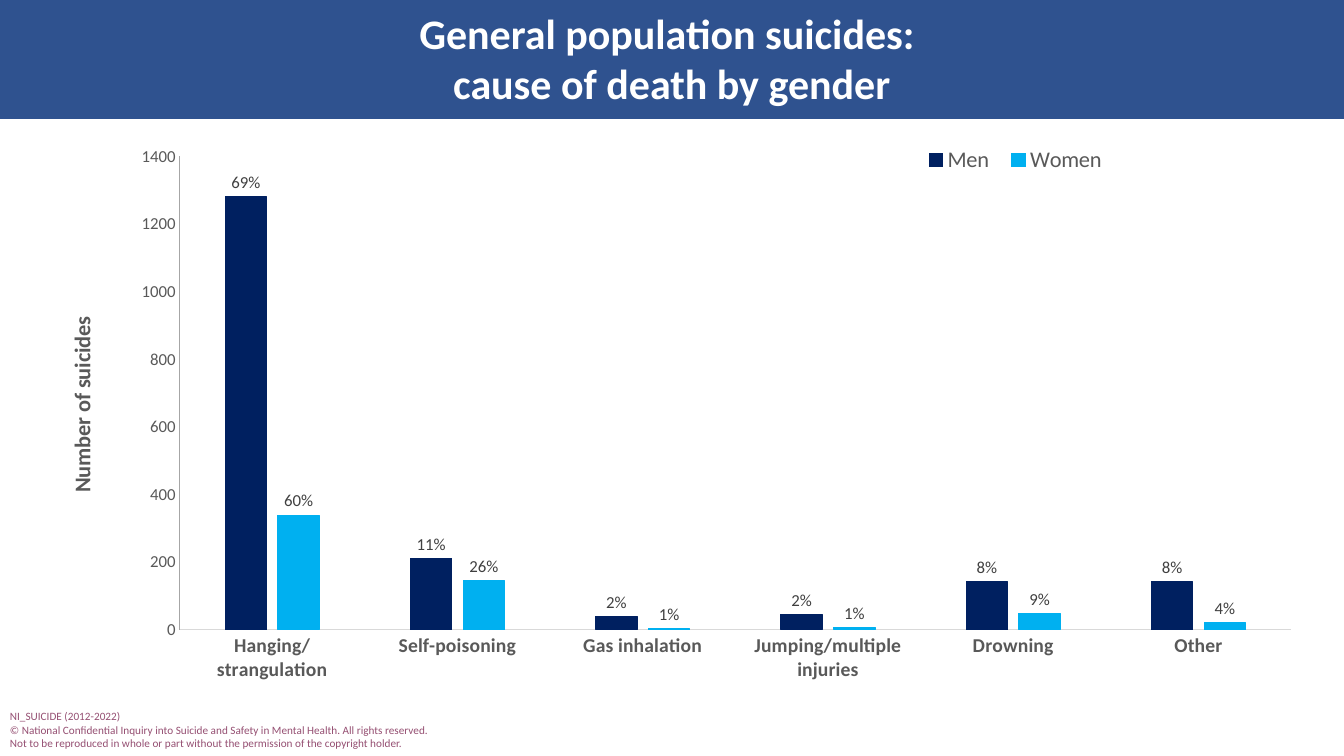
from lxml.etree import SubElement
from pptx import Presentation
from pptx.chart.data import CategoryChartData
from pptx.dml.color import RGBColor
from pptx.enum.chart import XL_CHART_TYPE, XL_LABEL_POSITION, XL_LEGEND_POSITION, XL_TICK_MARK
from pptx.enum.shapes import MSO_SHAPE
from pptx.enum.text import MSO_ANCHOR, MSO_AUTO_SIZE, PP_ALIGN
from pptx.oxml.ns import qn
from pptx.util import Inches, Pt

COLORS = {
    "band": "2F528F", "white": "FFFFFF", "note": "954F72", "text": "595959",
    "label": "404040", "base": "D9D9D9", "scale": "A6A6A6",
    "Men": "002060", "Women": "00B0F0",
}
CAUSES = ["Hanging/strangulation", "Self-poisoning", "Gas inhalation",
          "Jumping/multiple injuries", "Drowning", "Other"]
COUNTS = {"Men": [1281, 211, 40, 46, 142, 142], "Women": [339, 145, 3, 6, 48, 20]}
SHARES = {"Men": [69, 11, 2, 2, 8, 8], "Women": [60, 26, 1, 1, 9, 4]}
TITLE = ["General population suicides: ", "cause of death by gender"]
NOTE = [
    "NI_SUICIDE (2012-2022)",
    "© National Confidential Inquiry into Suicide and Safety in Mental Health. All rights reserved.",
    "Not to be reproduced in whole or part without the permission of the copyright holder.",
]


def color(name):
    return RGBColor.from_string(COLORS[name])


def style(font, size, name, bold=False):
    font.name = "Calibri"
    font.size = Pt(size)
    font.bold = bold
    font.color.rgb = color(name)


def write(frame, lines, size, name, bold=False, align=None):
    for i, line in enumerate(lines):
        para = frame.paragraphs[0] if i == 0 else frame.add_paragraph()
        para.alignment = align
        run = para.add_run()
        run.text = line
        style(run.font, size, name, bold)


def add_band(slide, x, y, w, h):
    band = slide.shapes.add_shape(MSO_SHAPE.RECTANGLE, Inches(x), Inches(y), Inches(w), Inches(h))
    band.shadow.inherit = False
    band.fill.solid()
    band.fill.fore_color.rgb = color("band")
    band.line.fill.background()


def add_text(slide, x, y, w, h, lines, wrap=True, anchor=MSO_ANCHOR.TOP,
             fit=MSO_AUTO_SIZE.NONE, **look):
    frame = slide.shapes.add_textbox(Inches(x), Inches(y), Inches(w), Inches(h)).text_frame
    frame.word_wrap = wrap
    frame.vertical_anchor = anchor
    frame.auto_size = fit
    write(frame, lines, **look)


def place(part, index, inner=False, **spot):
    """Set a chart part's manual layout, in fractions of the chart."""
    for old in part.findall(qn("c:layout")):
        part.remove(old)
    layout = part.makeelement(qn("c:layout"))
    part.insert(index, layout)
    manual = SubElement(layout, qn("c:manualLayout"))
    if inner:
        SubElement(manual, qn("c:layoutTarget"), val="inner")
    for mode in ("xMode", "yMode"):
        SubElement(manual, qn(f"c:{mode}"), val="edge")
    for key, value in spot.items():
        SubElement(manual, qn(f"c:{key}"), val=str(value))


def set_axis(axis, size, line, width, bold=False):
    axis.has_major_gridlines = False
    axis.major_tick_mark = axis.minor_tick_mark = XL_TICK_MARK.NONE
    style(axis.tick_labels.font, size, "text", bold)
    axis.format.line.color.rgb = color(line)
    axis.format.line.width = Pt(width)


def set_series(series):
    series.format.fill.solid()
    series.format.fill.fore_color.rgb = color(series.name)
    series.format.line.color.rgb = color(series.name)
    series.format.line.width = Pt(0.75)
    labels = series.data_labels
    labels.show_value = True
    labels.position = XL_LABEL_POSITION.OUTSIDE_END
    style(labels.font, 12, "label")
    for i, share in enumerate(SHARES[series.name]):
        label = series.points[i].data_label
        write(label.text_frame, [f"{share}%"], 12, "label")
        label.position = XL_LABEL_POSITION.OUTSIDE_END


def add_bars(slide, x, y, w, h):
    data = CategoryChartData()
    data.categories = CAUSES
    for name, counts in COUNTS.items():
        data.add_series(name, counts)
    chart = slide.shapes.add_chart(XL_CHART_TYPE.COLUMN_CLUSTERED, Inches(x), Inches(y),
                                   Inches(w), Inches(h), data).chart
    chart.has_title = False
    style(chart.font, 12, "text")

    # Bars and their labels
    plot = chart.plots[0]
    plot.vary_by_categories = False
    plot.gap_width = 219
    plot.overlap = -27
    for series in plot.series:
        set_series(series)
    place(plot._element.getparent(), 0, inner=True, x=0.11, y=0.06, w=0.88, h=0.81)
    place(plot._element.getparent(), 0, inner=True, x=0.112, y=0.064, w=0.875, h=0.807)

    # Axes
    set_axis(chart.category_axis, 14, "base", 0.75, bold=True)
    scale = chart.value_axis
    set_axis(scale, 12, "scale", 0.5)
    scale.minimum_scale, scale.maximum_scale, scale.major_unit = 0, 1400, 200
    write(scale.axis_title.text_frame, ["Number of suicides"], 16, "text", bold=True)
    place(scale.axis_title._element, 1, x=0.02, y=0.33)

    # Legend
    chart.has_legend = True
    legend = chart.legend
    legend.position = XL_LEGEND_POSITION.BOTTOM
    legend.include_in_layout = False
    style(legend.font, 16, "text")
    place(legend._element, 1, x=0.69, y=0.04, w=0.16, h=0.06)


def main():
    deck = Presentation()
    deck.slide_width, deck.slide_height = Inches(13.33), Inches(7.5)
    slide = deck.slides.add_slide(deck.slide_layouts[6])

    # Heading
    add_band(slide, 0, 0, 13.33, 1.18)
    add_text(slide, 0, 0.12, 13.33, 0.91, TITLE, anchor=MSO_ANCHOR.MIDDLE,
             size=30, name="white", bold=True, align=PP_ALIGN.CENTER)

    # Source note
    add_text(slide, 0, 6.99, 4.4, 0.51, NOTE, wrap=False,
             fit=MSO_AUTO_SIZE.SHAPE_TO_FIT_TEXT, size=8, name="note")

    # Chart
    add_bars(slide, 0.37, 1.18, 12.6, 5.82)
    deck.save("out.pptx")


if __name__ == "__main__":
    main()
